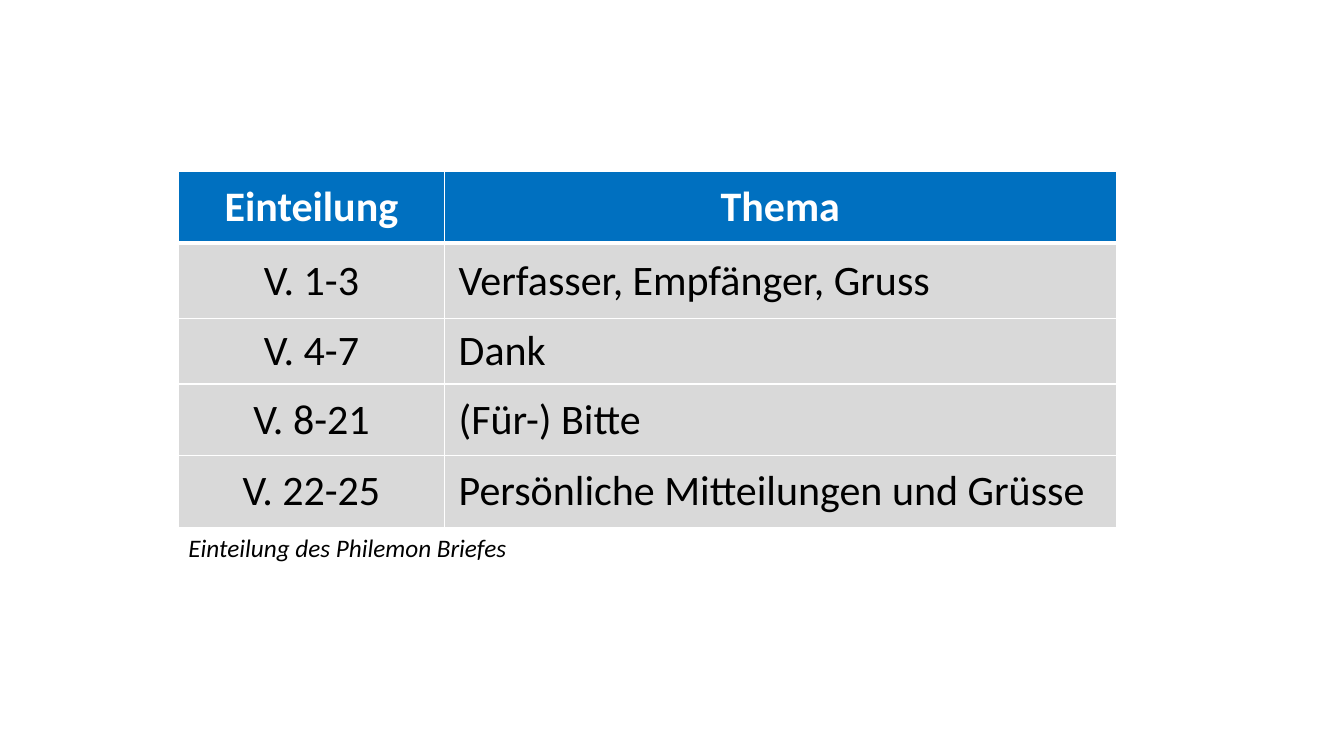
from dataclasses import dataclass
from typing import NamedTuple

from lxml.etree import SubElement
from pptx import Presentation
from pptx.dml.color import RGBColor
from pptx.enum.text import MSO_ANCHOR, PP_ALIGN
from pptx.oxml.ns import qn
from pptx.slide import Slide
from pptx.table import _Cell
from pptx.util import Emu, Pt

EMU_PER_PX = 9144  # 100 px to the inch


@dataclass(frozen=True)
class Theme:
    font: str = "Calibri"
    table_size: int = 30
    caption_size: int = 18
    header_fill: str = "0070C0"
    header_text: str = "FFFFFF"
    body_fill: str = "D9D9D9"
    text: str = "000000"
    border: str = "FFFFFF"
    thin: int = 1
    thick: int = 3


class Row(NamedTuple):
    verses: str
    topic: str
    height: int


THEME = Theme()
LEFT, TOP = 177, 170
COLUMN_WIDTHS = (264, 666)
CELL_MARGIN = 14
ROWS = (
    Row("Einteilung", "Thema", 71),
    Row("V. 1-3", "Verfasser, Empfänger, Gruss", 75),
    Row("V. 4-7", "Dank", 65),
    Row("V. 8-21", "(Für-) Bitte", 71),
    Row("V. 22-25", "Persönliche Mitteilungen und Grüsse", 71),
)
CAPTION = "Einteilung des Philemon Briefes"
CAPTION_WIDTH, CAPTION_HEIGHT = 339, 40


def px(n: int) -> Emu:
    return Emu(n * EMU_PER_PX)


def set_borders(cell: _Cell, row: int) -> None:
    """Draw thin borders, with a thick rule between header and body."""
    widths = {
        "L": THEME.thin,
        "R": THEME.thin,
        "T": THEME.thick if row == 1 else THEME.thin,
        "B": THEME.thick if row == 0 else THEME.thin,
    }
    tc_pr = cell._tc.get_or_add_tcPr()
    for side, width in widths.items():
        ln = SubElement(tc_pr, qn(f"a:ln{side}"), w=str(Pt(width)))
        fill = SubElement(ln, qn("a:solidFill"))
        SubElement(fill, qn("a:srgbClr"), val=THEME.border)


def style_cell(cell: _Cell, text: str, row: int, column: int) -> None:
    header = row == 0
    set_borders(cell, row)
    cell.fill.solid()
    cell.fill.fore_color.rgb = RGBColor.from_string(
        THEME.header_fill if header else THEME.body_fill
    )
    cell.vertical_anchor = MSO_ANCHOR.MIDDLE
    cell.margin_left = cell.margin_right = px(CELL_MARGIN)
    cell.margin_top = cell.margin_bottom = 0
    cell.text = text
    p = cell.text_frame.paragraphs[0]
    p.alignment = PP_ALIGN.CENTER if header or column == 0 else PP_ALIGN.LEFT
    p.font.name = THEME.font
    p.font.size = Pt(THEME.table_size)
    p.font.bold = header
    p.font.color.rgb = RGBColor.from_string(
        THEME.header_text if header else THEME.text
    )


def add_outline_table(slide: Slide) -> None:
    height = sum(row.height for row in ROWS)
    table = slide.shapes.add_table(
        len(ROWS), len(COLUMN_WIDTHS),
        px(LEFT), px(TOP), px(sum(COLUMN_WIDTHS)), px(height),
    ).table
    table.horz_banding = False
    for column, width in zip(table.columns, COLUMN_WIDTHS):
        column.width = px(width)
    for i, row in enumerate(ROWS):
        table.rows[i].height = px(row.height)
        for j, text in enumerate((row.verses, row.topic)):
            style_cell(table.cell(i, j), text, i, j)


def add_caption(slide: Slide) -> None:
    top = TOP + sum(row.height for row in ROWS)
    tf = slide.shapes.add_textbox(
        px(LEFT), px(top), px(CAPTION_WIDTH), px(CAPTION_HEIGHT)
    ).text_frame
    tf.word_wrap = False
    p = tf.paragraphs[0]
    p.text = CAPTION
    p.font.name = THEME.font
    p.font.size = Pt(THEME.caption_size)
    p.font.italic = True
    p.font.color.rgb = RGBColor.from_string(THEME.text)


def main() -> None:
    prs = Presentation()
    prs.slide_width, prs.slide_height = px(1333), px(750)
    slide = prs.slides.add_slide(prs.slide_layouts[6])
    add_outline_table(slide)
    add_caption(slide)
    prs.save("out.pptx")


if __name__ == "__main__":
    main()
